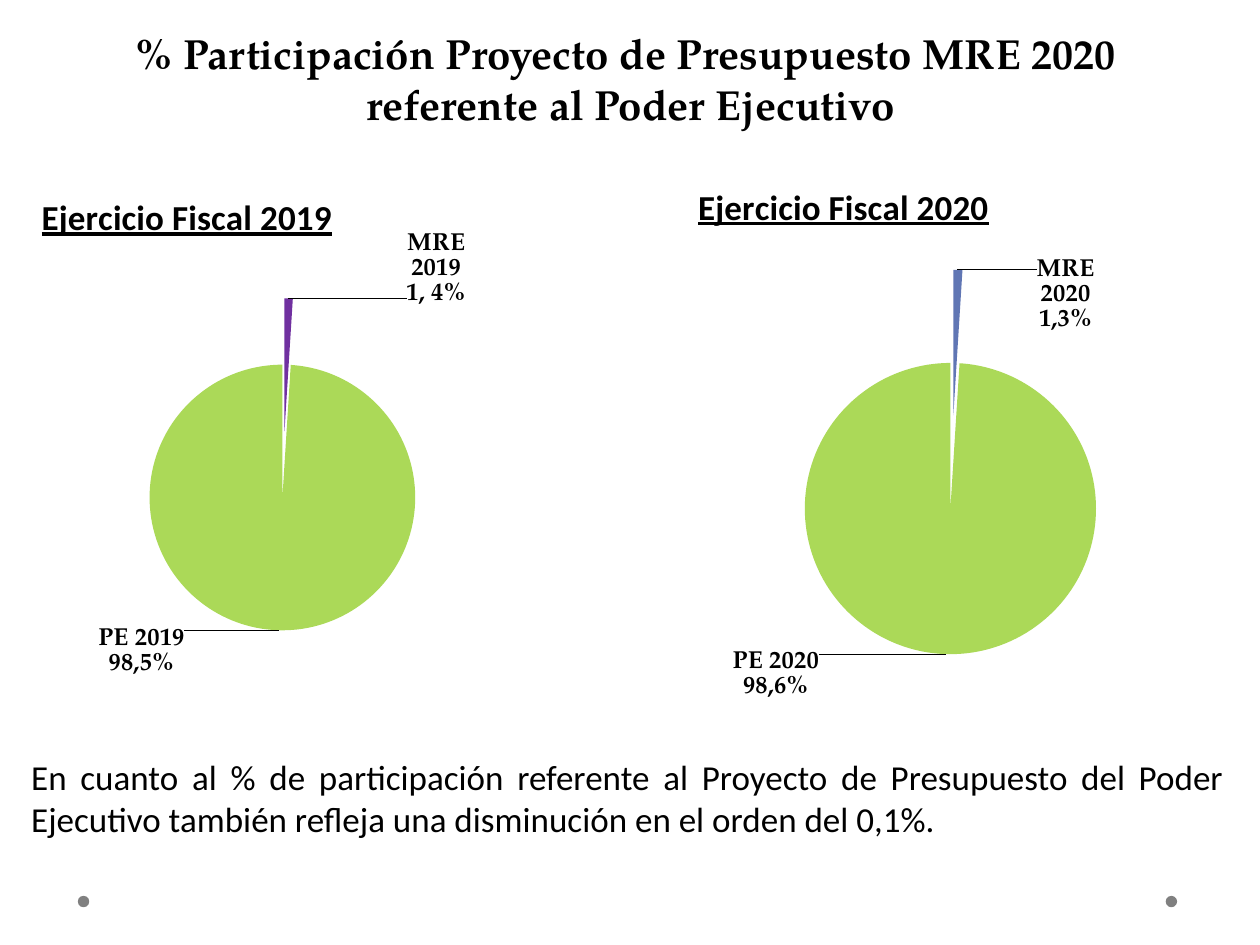
from lxml.etree import SubElement
from pptx import Presentation
from pptx.chart.data import CategoryChartData
from pptx.dml.color import RGBColor
from pptx.enum.chart import XL_CHART_TYPE as ChartType, XL_LABEL_POSITION as LabelPos
from pptx.enum.shapes import MSO_SHAPE as Shape
from pptx.enum.text import MSO_ANCHOR as Anchor, MSO_AUTO_SIZE as AutoSize, PP_ALIGN as Align
from pptx.oxml import parse_xml
from pptx.oxml.ns import nsdecls, qn
from pptx.util import Cm, Pt

# Content
TITLE = ["% Participación Proyecto de Presupuesto MRE 2020 ", "referente al Poder Ejecutivo"]
CONCLUSION = ("En cuanto al % de participación referente al Proyecto de Presupuesto del Poder "
              "Ejecutivo también refleja una disminución en el orden del 0,1%.")
# box in cm; title, plot and label layouts are fractions of the chart
PIES = [
    {"title": "Ejercicio Fiscal 2019", "box": (0.71, 3.53, 11, 10.8),
     "title_at": (0, 0.02), "plot": (0.15, 0.23, 0.61, 0.62), "explosion": 25,
     "slices": [("MRE 2019", "1, 4%", 1, "purple", (0.27, 0.03)),
                ("PE 2019", "98,5%", 99, "green", (-0.25, -0.02))]},
    {"title": "Ejercicio Fiscal 2020", "box": (13.49, 3.43, 11.4, 11),
     "title_at": (0.04, 0.01), "plot": (0.16, 0.08, 0.68, 0.91), "explosion": 32,
     "slices": [("MRE 2020", "1,3%", 1, "blue", (0.19, 0.13)),
                ("PE 2020", "98,6%", 99, "green", (-0.3, -0.02))]},
]
DOTS_LEFT = [1.57, 23.5]
COLORS = {"black": "000000", "gray": "808080", "purple": "7030A0",
          "blue": "6076B4", "green": "ABD958"}
SERIF, SANS = "TeX Gyre Pagella", "Calibri"


def color(name):
    return RGBColor.from_string(COLORS[name])


def set_font(font, face, size, bold=False):
    font.name, font.size, font.bold = face, Pt(size), bold
    font.color.rgb = color("black")


def set_layout(parent, fractions, after=None, inner=False):
    """Place a chart part by x, y and, if given, width and height."""
    for old in parent.findall(qn("c:layout")):
        parent.remove(old)
    layout = parse_xml(f"<c:layout {nsdecls('c')}><c:manualLayout/></c:layout>")
    manual = layout[0]
    if inner:
        SubElement(manual, qn("c:layoutTarget")).set("val", "inner")
    if after != "c:idx":  # labels are moved relative to their own place
        for mode in ("xMode", "yMode"):
            SubElement(manual, qn(f"c:{mode}")).set("val", "edge")
    for key, fraction in zip("xywh", fractions):
        SubElement(manual, qn(f"c:{key}")).set("val", str(fraction))
    if after:
        parent.find(qn(after)).addnext(layout)
    else:
        parent.insert(0, layout)


def add_pie(slide, pie):
    shares = CategoryChartData()
    shares.categories = [name for name, *_ in pie["slices"]]
    shares.add_series("Participación", [share for _, _, share, *_ in pie["slices"]])
    chart = slide.shapes.add_chart(ChartType.PIE, *map(Cm, pie["box"]), shares).chart
    chart.has_legend = False
    set_font(chart.font, SERIF, 10)

    # Heading
    chart.has_title = True
    heading = chart.chart_title.text_frame.paragraphs[0]
    heading.text = pie["title"]
    set_font(heading.font, SANS, 20, True)
    heading.font.underline = True
    chart.chart_title.include_in_layout = False
    set_layout(chart.chart_title._element, pie["title_at"], after="c:tx")

    # Exploded slices
    plot = chart.plots[0]
    plot.vary_by_categories = True
    set_layout(plot._element.getparent(), pie["plot"], inner=True)
    series = plot.series[0]
    for index, (name, percent, _, fill, _) in enumerate(pie["slices"]):
        point = series.points[index]
        point.format.fill.solid()
        point.format.fill.fore_color.rgb = color(fill)
        label = point.data_label
        label.text_frame.text = f"{name}\n{percent}"
        for line in label.text_frame.paragraphs:
            set_font(line.runs[0].font, SERIF, 14, True)
        label.position = LabelPos.OUTSIDE_END
    series_xml = series._element
    explosion = series_xml.makeelement(qn("c:explosion"), {"val": str(pie["explosion"])})
    series_xml.find(qn("c:dPt")).addprevious(explosion)
    for label_xml, (*_, offset) in zip(series_xml.iter(qn("c:dLbl")), pie["slices"]):
        set_layout(label_xml, offset, after="c:idx")


def main():
    prs = Presentation()
    prs.slide_width, prs.slide_height = Cm(25.4), Cm(19.05)
    slide = prs.slides.add_slide(prs.slide_layouts[5])

    # Title
    title = slide.shapes.title
    title.left, title.top, title.width, title.height = map(Cm, (-1.09, 0.72, 27.6, 2))
    title.text_frame.text = "\n".join(TITLE)
    title.text_frame.vertical_anchor = Anchor.BOTTOM
    title.text_frame.auto_size = AutoSize.NONE
    for line in title.text_frame.paragraphs:
        line.alignment = Align.CENTER
        set_font(line.font, SERIF, 24, True)

    # Footer dots
    for left in DOTS_LEFT:
        dot = slide.shapes.add_shape(Shape.OVAL, Cm(left), Cm(18.06), Cm(0.23), Cm(0.23))
        dot.shadow.inherit = False
        dot.fill.solid()
        dot.fill.fore_color.rgb = color("gray")
        dot.line.fill.background()

    # Charts
    for pie in PIES:
        add_pie(slide, pie)

    # Conclusion
    conclusion = slide.shapes.add_textbox(Cm(0.38), Cm(15.11), Cm(24.54), Cm(1.96)).text_frame
    conclusion.word_wrap = True
    conclusion.text = CONCLUSION
    conclusion.paragraphs[0].alignment = Align.JUSTIFY
    set_font(conclusion.paragraphs[0].font, SANS, 20)

    prs.save("out.pptx")


if __name__ == "__main__":
    main()
